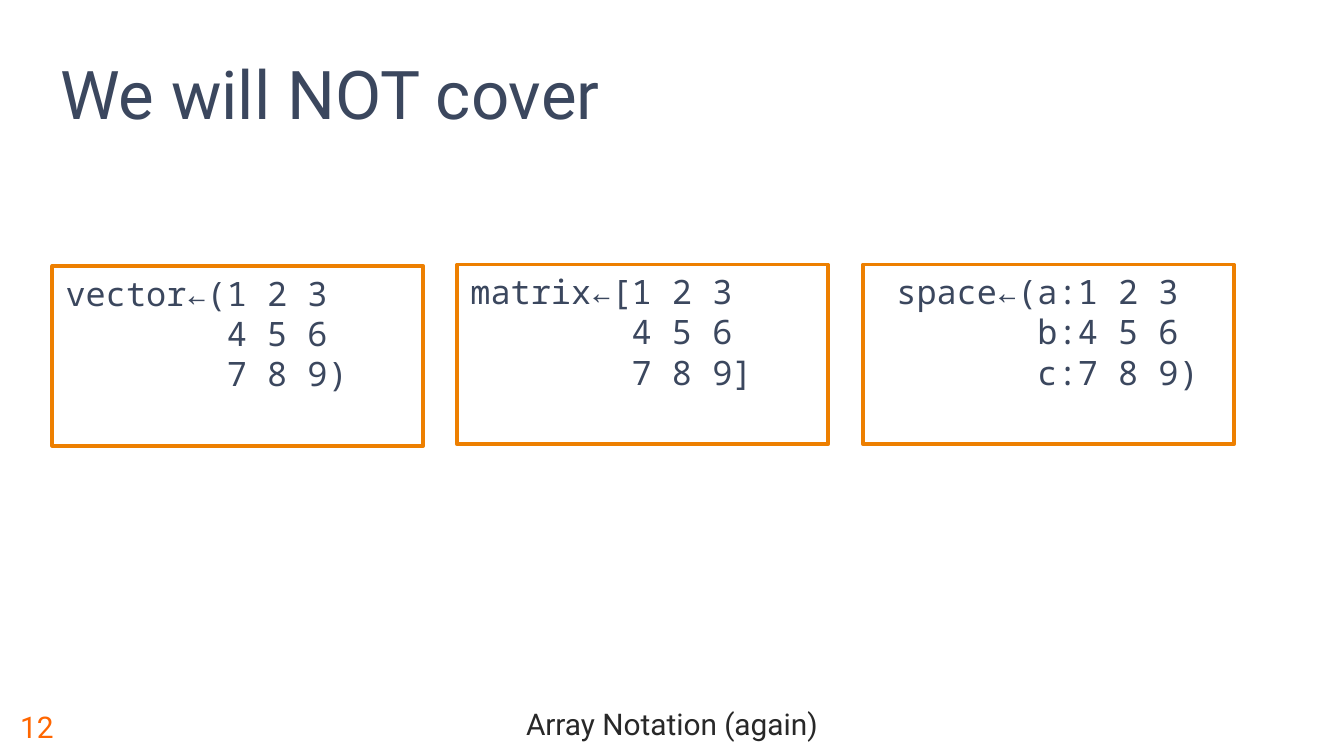
from pptx import Presentation
from pptx import util as u
from pptx.dml.color import RGBColor
from pptx.enum import shapes, text

NAVY = RGBColor(0x3B, 0x47, 0x5E)
ORANGE = RGBColor(0xED, 0x7F, 0x00)
NUMBER_ORANGE = RGBColor(0xFF, 0x66, 0x00)
CHARCOAL = RGBColor(0x28, 0x28, 0x28)

deck = Presentation()
deck.slide_width = u.Cm(25.4)
deck.slide_height = u.Cm(14.29)
page = deck.slides.add_slide(deck.slide_layouts[6])


def style(para, name, size, color):
    para.font.name = name
    para.font.size = u.Pt(size)
    para.font.color.rgb = color


labels = [
    ("Array Notation (again)", 0, 13.18, 25.4, 1.11, 16, CHARCOAL,
     text.PP_ALIGN.CENTER, text.MSO_ANCHOR.MIDDLE),
    ("12", 0.13, 13.18, 1.85, 1.11, 16, NUMBER_ORANGE,
     text.PP_ALIGN.LEFT, text.MSO_ANCHOR.MIDDLE),
    ("We will NOT cover", 0.89, 0.74, 18.08, 1.9, 36, NAVY,
     text.PP_ALIGN.LEFT, text.MSO_ANCHOR.BOTTOM),
]
for words, left, top, width, height, size, color, align, anchor in labels:
    box = page.shapes.add_textbox(u.Cm(left), u.Cm(top), u.Cm(width), u.Cm(height))
    box.text_frame.word_wrap = True
    box.text_frame.vertical_anchor = anchor
    para = box.text_frame.paragraphs[0]
    para.text = words
    para.alignment = align
    style(para, "Roboto", size, color)
    if align == text.PP_ALIGN.CENTER:
        para.line_spacing = 0.8

examples = [
    (0.99, 5.03, ["vector←(1 2 3", "        4 5 6", "        7 8 9)"]),
    (8.64, 5, ["matrix←[1 2 3", "        4 5 6", "        7 8 9]"]),
    (16.31, 5, [" space←(a:1 2 3", "        b:4 5 6", "        c:7 8 9)"]),
]
for left, top, lines in examples:
    box = page.shapes.add_shape(shapes.MSO_SHAPE.RECTANGLE,
                                u.Cm(left), u.Cm(top), u.Cm(7.01), u.Cm(3.4))
    box.shadow.inherit = False
    box.fill.background()
    box.line.color.rgb = ORANGE
    box.line.width = u.Pt(2)
    frame = box.text_frame
    frame.word_wrap = True
    frame.vertical_anchor = text.MSO_ANCHOR.TOP
    frame.text = "\n".join(lines)
    for para in frame.paragraphs:
        para.alignment = text.PP_ALIGN.LEFT
        style(para, "Noto Sans Mono", 18, NAVY)

deck.save("out.pptx")
